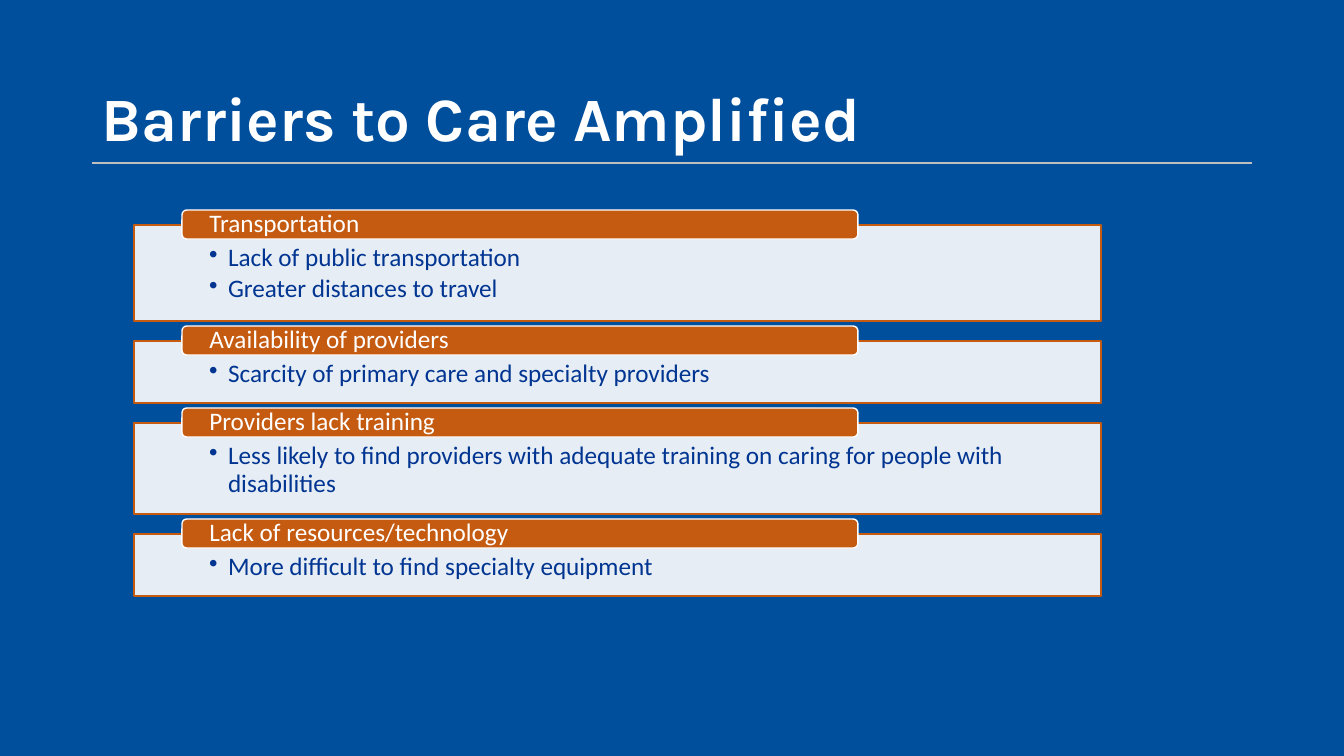
from pptx import Presentation
from pptx.dml.color import RGBColor
from pptx.enum.shapes import MSO_CONNECTOR, MSO_SHAPE
from pptx.enum.text import MSO_ANCHOR, PP_ALIGN
from pptx.oxml.ns import qn
from pptx.util import Emu, Pt
from lxml.etree import SubElement

BLUE = RGBColor(0x00, 0x4F, 0x9D)
NAVY = RGBColor(0x01, 0x35, 0x91)
ORANGE = RGBColor(0xC5, 0x5A, 0x11)
WHITE = RGBColor(0xFF, 0xFF, 0xFF)
GRAY = RGBColor(0xBF, 0xBF, 0xBF)

SLIDE_WIDTH, SLIDE_HEIGHT = 1344, 756
CARD_LEFT, CARD_WIDTH, CARD_TOP, CARD_GAP = 134, 967, 225, 20
TAB_LEFT, TAB_WIDTH, TAB_HEIGHT, TAB_RISE = 182, 676, 29, 15

BARRIERS = [
    ("Transportation", 96, ["Lack of public transportation", "Greater distances to travel"]),
    ("Availability of providers", 62, ["Scarcity of primary care and specialty providers"]),
    ("Providers lack training", 91,
     ["Less likely to find providers with adequate training on caring for people with disabilities"]),
    ("Lack of resources/technology", 62, ["More difficult to find specialty equipment"]),
]


def px(length):
    return Emu(round(length * 12192000 / SLIDE_WIDTH))


def apply_format(target, values):
    for name, value in values.items():
        setattr(target, name, value)


class SlideBuilder:
    """Draws styled elements on the current slide."""

    title_font = {"name": "Karla", "size": Pt(44), "bold": True}
    body_font = {"name": "Calibri", "size": Pt(18)}

    def __init__(self, presentation):
        self.slide = presentation.slides.add_slide(presentation.slide_layouts[6])
        fill = self.slide.background.fill
        fill.solid()
        fill.fore_color.rgb = BLUE

    def set_text(self, shape, texts, font, color, margins, anchor, bulleted=False):
        left, top, right, bottom = map(px, margins)
        frame = shape.text_frame
        apply_format(frame, {"word_wrap": True, "vertical_anchor": anchor, "margin_left": left,
                             "margin_top": top, "margin_right": right, "margin_bottom": bottom})
        for index, text in enumerate(texts):
            paragraph = frame.add_paragraph() if index else frame.paragraphs[0]
            apply_format(paragraph, {"text": text, "alignment": PP_ALIGN.LEFT, "line_spacing": 0.9})
            if bulleted:
                paragraph.space_after = Pt(2.7)
                self.bullet(paragraph)
            apply_format(paragraph.font, font)
            paragraph.font.color.rgb = color

    def bullet(self, paragraph):
        properties = paragraph._p.get_or_add_pPr()
        properties.set("marL", str(px(19)))
        properties.set("indent", str(px(-19)))
        SubElement(properties, qn("a:buChar"), char="•")

    def title(self, text, left, top, width, height):
        box = self.slide.shapes.add_textbox(*map(px, (left, top, width, height)))
        self.set_text(box, [text], self.title_font, WHITE, (10, 5, 10, 5), MSO_ANCHOR.BOTTOM)

    def rule(self, left, right, y):
        line = self.slide.shapes.add_connector(
            MSO_CONNECTOR.STRAIGHT, px(left), px(y), px(right), px(y))
        line.line.color.rgb = GRAY
        line.line.width = Pt(1)
        SubElement(line._element.spPr, qn("a:effectLst"))

    def panel(self, kind, bounds, fill_color, line_color):
        shape = self.slide.shapes.add_shape(kind, *map(px, bounds))
        shape.shadow.inherit = False
        shape.fill.solid()
        shape.fill.fore_color.rgb = fill_color
        shape.line.color.rgb = line_color
        shape.line.width = Pt(1)
        return shape

    def card(self, top, height, points):
        card = self.panel(MSO_SHAPE.RECTANGLE, (CARD_LEFT, top, CARD_WIDTH, height), WHITE, ORANGE)
        color = card._element.spPr.find(qn("a:solidFill")).find(qn("a:srgbClr"))
        SubElement(color, qn("a:alpha"), val="90000")
        self.set_text(card, points, self.body_font, NAVY, (75, 20, 75, 14), MSO_ANCHOR.TOP, True)

    def tab(self, top, heading):
        bounds = (TAB_LEFT, top, TAB_WIDTH, TAB_HEIGHT)
        tab = self.panel(MSO_SHAPE.ROUNDED_RECTANGLE, bounds, ORANGE, WHITE)
        self.set_text(tab, [heading], self.body_font, WHITE, (26, 0, 26, 0), MSO_ANCHOR.MIDDLE)


def main():
    presentation = Presentation()
    presentation.slide_width = px(SLIDE_WIDTH)
    presentation.slide_height = px(SLIDE_HEIGHT)
    builder = SlideBuilder(presentation)
    builder.rule(92, 1252, 163)
    builder.title("Barriers to Care Amplified", 92, 64, 860, 96)
    top = CARD_TOP
    for heading, height, points in BARRIERS:
        builder.card(top, height, points)
        builder.tab(top - TAB_RISE, heading)
        top += height + CARD_GAP
    presentation.save("out.pptx")


if __name__ == "__main__":
    main()
